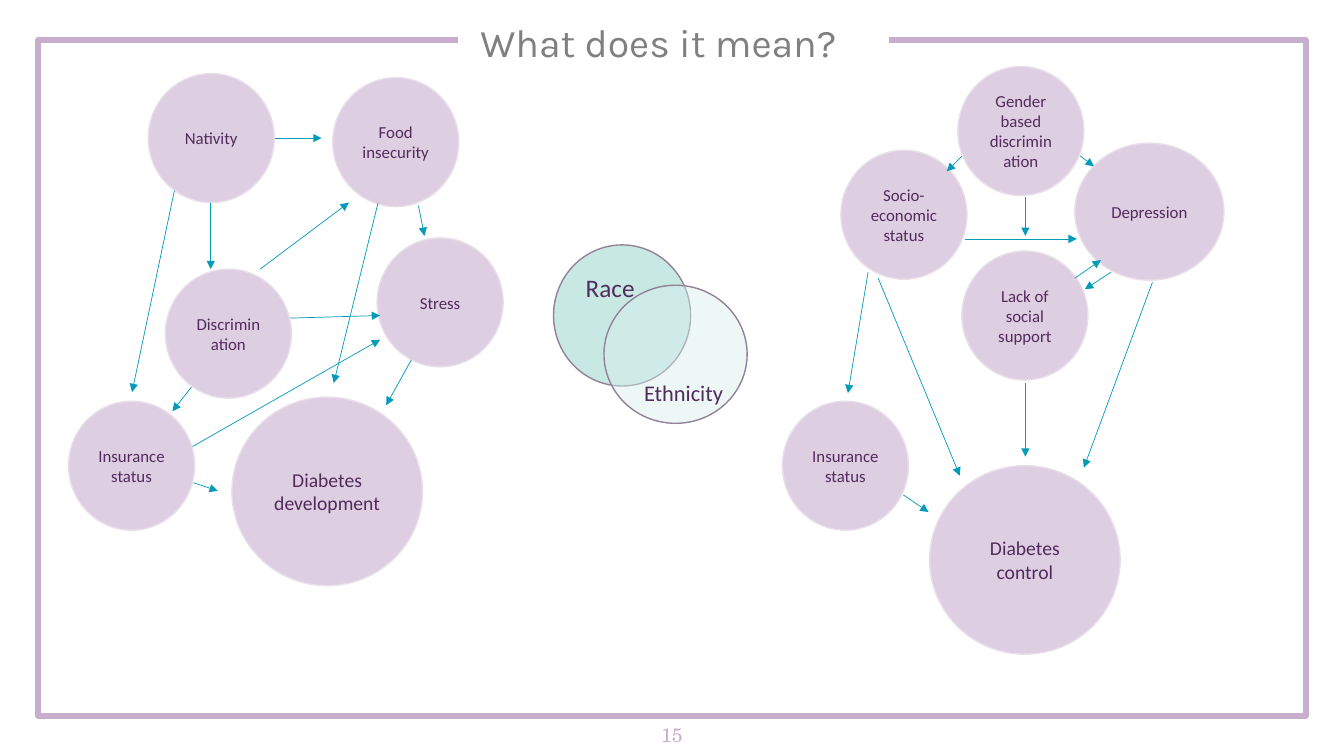
"""Build a slide with two cause maps around a race and ethnicity overlap."""
from lxml.etree import SubElement
from pptx import Presentation
from pptx.dml.color import RGBColor as Color
from pptx.enum.shapes import MSO_CONNECTOR as Link, MSO_SHAPE as Shape
from pptx.enum.text import MSO_ANCHOR as Anchor, MSO_AUTO_SIZE as Fit, PP_ALIGN as Align
from pptx.oxml.ns import qn
from pptx.util import Inches, Pt

HUES = {
    "frame": "C8AECD", "title": "808080", "disc": "DECEE1", "rim": "E9DFEB",
    "ink": "522B5D", "arrow": "039BB7", "race": "C7E8E3", "ethnic": "D9F0EC",
    "ring": "948198",
}
SMALL = (1.25, 1.28)
LARGE = (1.89, 1.87)
DISCS = [
    ("Diabetes development", 2.3, 3.94, LARGE, 14),
    ("Food insecurity", 3.3, 0.77, SMALL, 12),
    ("Nativity", 1.47, 0.73, SMALL, 12),
    ("Insurance status", 0.68, 3.98, SMALL, 12),
    ("Stress", 3.74, 2.36, SMALL, 12),
    ("Diabetes control", 9.22, 4.62, LARGE, 14),
    ("Socio-economic status", 8.34, 1.49, SMALL, 12),
    ("Lack of social support", 9.54, 2.49, SMALL, 12),
    ("Depression", 10.66, 1.42, (1.48, 1.36), 12),
    ("Insurance status", 7.76, 3.98, SMALL, 12),
]
TOPS = [
    ("Gender based discrimination", 9.5, 0.66, SMALL, 12),
    ("Discrimination", 1.64, 2.67, SMALL, 12),
]
ARROWS = [
    (2.73, 1.37, 3.19, 1.37), (4.15, 2.04, 4.21, 2.34),
    (2.58, 2.67, 3.46, 2.01), (2.09, 2.01, 2.09, 2.67),
    (2.74, 3.16, 3.77, 3.13), (3.75, 2.01, 3.31, 3.8),
    (4.08, 3.57, 3.83, 4.02), (1.93, 3.8, 1.71, 4.08),
    (1.73, 1.89, 1.31, 3.89), (1.92, 4.79, 2.16, 4.87),
    (1.91, 4.43, 3.77, 3.37), (11.43, 2.8, 10.75, 4.64),
    (9.57, 2.37, 10.68, 2.37), (8.71, 2.76, 9.52, 4.72),
    (10.17, 1.95, 10.17, 2.34), (10.52, 1.4, 10.85, 1.65),
    (9.6, 1.49, 9.39, 1.7), (10.66, 2.76, 10.92, 2.58),
    (11.02, 2.7, 10.76, 2.87), (10.17, 3.8, 10.17, 4.53),
    (8.61, 2.7, 8.41, 3.9), (8.96, 4.91, 9.21, 5.08),
]


def hue(name):
    """Return a named colour."""
    return Color.from_string(HUES[name])


def stroke(item, name, width):
    """Set the line of a shape or connector."""
    item.line.color.rgb = hue(name)
    item.line.width = Pt(width)


def write(frame, text, size, name="ink", font="Calibri", align=Align.CENTER):
    """Add one styled run to a text frame."""
    frame.word_wrap = True
    para = frame.paragraphs[0]
    para.alignment = align
    run = para.add_run()
    run.text = text
    run.font.size = Pt(size)
    run.font.name = font
    run.font.color.rgb = hue(name)
    return para


def add_label(slide, box, text, size, inset=None, **style):
    """Add a text box and return its frame."""
    frame = slide.shapes.add_textbox(*map(Inches, box)).text_frame
    write(frame, text, size, **style)
    if inset is not None:
        frame.margin_left = frame.margin_right = Inches(inset)
        frame.margin_top = frame.margin_bottom = Inches(inset)
    return frame


def add_oval(slide, box, fill, rim, alpha=None):
    """Add an ellipse, see-through when alpha is given in percent."""
    oval = slide.shapes.add_shape(Shape.OVAL, *map(Inches, box))
    oval.shadow.inherit = False
    oval.fill.solid()
    oval.fill.fore_color.rgb = hue(fill)
    stroke(oval, rim, 1)
    if alpha is not None:
        tint = oval.fill._xPr.find(qn("a:solidFill"))[0]
        SubElement(tint, qn("a:alpha"), val=str(alpha * 1000))
    return oval


def add_disc(slide, text, left, top, size, points):
    """Add a factor disc with its name inside."""
    frame = add_oval(slide, (left, top, *size), "disc", "rim").text_frame
    frame.vertical_anchor = Anchor.MIDDLE
    write(frame, text, points)


def add_arrow(slide, ends):
    """Add a thin arrow from the first point to the second."""
    arrow = slide.shapes.add_connector(Link.STRAIGHT, *map(Inches, ends))
    stroke(arrow, "arrow", 0.5)
    SubElement(arrow.line._get_or_add_ln(), qn("a:tailEnd"), type="triangle")
    SubElement(arrow._element.spPr, qn("a:effectLst"))


def add_frame(slide):
    """Add the border that is open behind the title."""
    left, top, right, base = map(Inches, (0.38, 0.4, 12.95, 7.1))
    path = slide.shapes.build_freeform(Inches(4.54), top)
    path.add_line_segments(
        [(left, top), (left, base), (right, base), (right, top), (Inches(8.82), top)],
        close=False)
    border = path.convert_to_shape()
    border.shadow.inherit = False
    border.fill.background()
    stroke(border, "frame", 4.25)


def add_venn(slide):
    """Add the overlap of race and ethnicity."""
    add_oval(slide, (5.49, 2.43, 1.36, 1.4), "race", "ring")
    add_oval(slide, (5.99, 2.83, 1.42, 1.37), "ethnic", "ring", 46)
    for box, text, size in [((5.71, 2.65, 0.82, 0.4), "Race", 18),
                            ((6.29, 3.71, 1.13, 0.37), "Ethnicity", 16)]:
        frame = add_label(slide, box, text, size, align=Align.LEFT)
        frame.auto_size = Fit.SHAPE_TO_FIT_TEXT


def main():
    """Build and save the slide."""
    deck = Presentation()
    deck.slide_width, deck.slide_height = Inches(13.33), Inches(7.5)
    slide = deck.slides.add_slide(deck.slide_layouts[6])
    add_frame(slide)
    number = add_label(slide, (0, 6.7, 13.33, 1.17), "15", 14, 0.1,
                       name="frame", font="TeX Gyre Schola")
    number.vertical_anchor = Anchor.MIDDLE
    title = add_label(slide, (3.65, 0.13, 5.76, 1.07), "What does it mean?", 28, 0.1,
                      name="title", font="Karla")
    title.paragraphs[0].line_spacing = 0.9
    for disc in DISCS:
        add_disc(slide, *disc)
    for ends in ARROWS:
        add_arrow(slide, ends)
    for disc in TOPS:
        add_disc(slide, *disc)
    add_venn(slide)
    deck.save("out.pptx")


if __name__ == "__main__":
    main()
